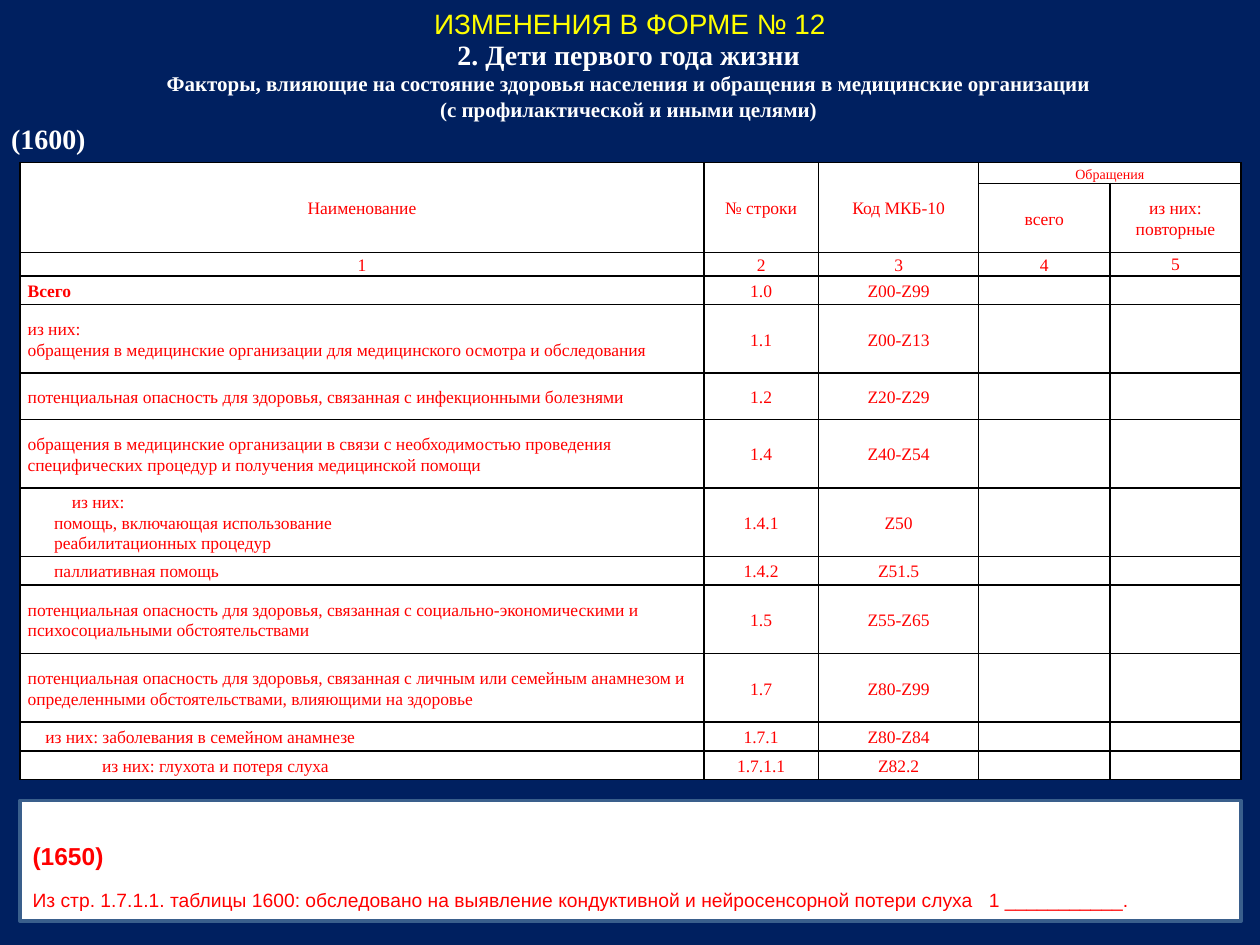
from lxml import etree
from pptx import Presentation, util as u
from pptx.dml.color import RGBColor
from pptx.enum import shapes, text
from pptx.oxml.ns import qn

WIDTH, HEIGHT = u.Inches(10), u.Inches(7.5)
COLORS = {"navy": "002060", "white": "FFFFFF", "red": "FF0000",
          "yellow": "FFFF00", "black": "000000", "steel": "3A5F8C"}
SERIF, SANS = "Times New Roman", "Arial"
CENTER, LEFT = text.PP_ALIGN.CENTER, text.PP_ALIGN.LEFT

COLUMNS = [5.42, 0.91, 1.27, 1.04, 1.04]
ROWS = [0.17, 0.55, 0.19, 0.23, 0.55, 0.37, 0.55,
        0.55, 0.23, 0.55, 0.55, 0.23, 0.23]
HEADER = [
    ["Наименование", "№ строки", "Код МКБ-10", "Обращения", ""],
    ["", "", "", "всего", "из них: повторные"],
    ["1", "2", "3", "4", "5"],
]
FACTORS = [
    ([("Всего", 0)], "1.0", "Z00-Z99"),
    ([("из них:", 0),
      ("обращения в медицинские организации для медицинского осмотра и обследования", 0)],
     "1.1", "Z00-Z13"),
    ([("потенциальная опасность для здоровья, связанная с инфекционными болезнями", 0)],
     "1.2", "Z20-Z29"),
    ([("обращения в медицинские организации в связи с необходимостью проведения "
       "специфических процедур и получения медицинской помощи", 0)], "1.4", "Z40-Z54"),
    ([("из них:", 0.35), ("помощь, включающая использование", 0.21),
      ("реабилитационных процедур", 0.21)], "1.4.1", "Z50"),
    ([("паллиативная помощь", 0.21)], "1.4.2", "Z51.5"),
    ([("потенциальная опасность для здоровья, связанная с социально-экономическими "
       "и психосоциальными обстоятельствами", 0)], "1.5", "Z55-Z65"),
    ([("потенциальная опасность для здоровья, связанная с личным или семейным анамнезом "
       "и определенными обстоятельствами, влияющими на здоровье", 0)], "1.7", "Z80-Z99"),
    ([("из них: заболевания в семейном анамнезе", 0.14)], "1.7.1", "Z80-Z84"),
    ([("из них: глухота и потеря слуха", 0.59)], "1.7.1.1", "Z82.2"),
]


def rgb(name):
    return RGBColor.from_string(COLORS[name])


def region(left, top, width, height):
    return (round(left * WIDTH), round(top * HEIGHT),
            round(width * WIDTH), round(height * HEIGHT))


def write(frame, lines, face, color, align=LEFT):
    for index, (words, size, bold) in enumerate(lines):
        line = frame.add_paragraph() if index else frame.paragraphs[0]
        line.text = words
        line.alignment = align
        line.font.size, line.font.bold = u.Pt(size), bold
        line.font.name, line.font.color.rgb = face, rgb(color)
        if not words:
            etree.SubElement(line._p, qn("a:endParaRPr"), sz=str(size * 100))


def add_heading(slide, box, lines, face, color):
    heading = slide.shapes.add_textbox(*box).text_frame
    heading.word_wrap = True
    write(heading, lines, face, color, CENTER)
    return heading


def style_cell(cell):
    cell.fill.solid()
    cell.fill.fore_color.rgb = rgb("white")
    cell.vertical_anchor = text.MSO_ANCHOR.MIDDLE
    cell.margin_left = cell.margin_right = u.Inches(0.06)
    cell.margin_top, cell.margin_bottom = u.Inches(0.01), 0
    properties = cell._tc.get_or_add_tcPr()
    for position, side in enumerate(("lnL", "lnR", "lnT", "lnB")):
        border = etree.Element(qn(f"a:{side}"), w=str(u.Pt(1)))
        solid = etree.SubElement(border, qn("a:solidFill"))
        etree.SubElement(solid, qn("a:srgbClr"), val=COLORS["black"])
        properties.insert(position, border)


def fill_cell(cell, entries, align, size=10, bold=False):
    style_cell(cell)
    write(cell.text_frame, [(words, size, bold) for words, _ in entries],
          SERIF, "red", align)
    for line, (_, indent) in zip(cell.text_frame.paragraphs, entries):
        line.line_spacing = 1.07
        if indent:
            line._p.get_or_add_pPr().set("marL", str(u.Inches(indent)))


def add_factor_table(slide, box):
    left, top, width, height = box
    table = slide.shapes.add_table(len(ROWS), len(COLUMNS), *box).table
    for column, share in zip(table.columns, COLUMNS):
        column.width = round(width * share / sum(COLUMNS))
    for row, share in zip(table.rows, ROWS):
        row.height = round(height * share / sum(ROWS))

    for r, labels in enumerate(HEADER):
        for c, label in enumerate(labels):
            fill_cell(table.cell(r, c), [(label, 0)], CENTER, 8 if r == 0 and c > 2 else 10)
    for r, (names, number, code) in enumerate(FACTORS, len(HEADER)):
        fill_cell(table.cell(r, 0), names, LEFT, bold=number == "1.0")
        for c, value in enumerate((number, code, "", ""), 1):
            fill_cell(table.cell(r, c), [(value, 0)], CENTER)

    for c in range(3):
        table.cell(0, c).merge(table.cell(1, c))
    table.cell(0, 3).merge(table.cell(0, 4))
    table.cell(2, 4).vertical_anchor = text.MSO_ANCHOR.TOP


def add_hearing_note(slide, box):
    panel = slide.shapes.add_shape(shapes.MSO_SHAPE.RECTANGLE, *box)
    panel.shadow.inherit = False
    panel.fill.solid()
    panel.fill.fore_color.rgb = rgb("white")
    panel.line.color.rgb = rgb("steel")
    panel.line.width = u.Pt(2)
    note = panel.text_frame
    note.word_wrap = True
    note.vertical_anchor = text.MSO_ANCHOR.BOTTOM
    note.margin_bottom = u.Inches(0.08)
    write(note, [
        ("(1650)", 14, True),
        ("Из стр. 1.7.1.1. таблицы 1600: обследовано на выявление кондуктивной "
         "и нейросенсорной потери слуха\t1 ___________.", 11, False),
    ], SANS, "red")
    survey = note.paragraphs[1]
    survey.space_before = u.Pt(10)
    stops = etree.SubElement(survey._p.get_or_add_pPr(), qn("a:tabLst"))
    etree.SubElement(stops, qn("a:tab"), pos=str(u.Inches(7.59)), algn="l")
    survey._p.pPr.find(qn("a:defRPr")).addprevious(stops)


def main():
    deck = Presentation()
    deck.slide_width, deck.slide_height = WIDTH, HEIGHT
    slide = deck.slides.add_slide(deck.slide_layouts[6])
    slide.background.fill.solid()
    slide.background.fill.fore_color.rgb = rgb("navy")

    add_factor_table(slide, region(0.016, 0.172, 0.969, 0.653))
    add_heading(slide, region(0, 0, 1, 0.05),
                [("ИЗМЕНЕНИЯ В ФОРМЕ № 12", 16, False)], SANS, "yellow")
    section = add_heading(slide, region(-0.001, 0.033, 1, 0.14), [
        ("2. Дети первого года жизни", 16, True),
        ("Факторы, влияющие на состояние здоровья населения "
         "и обращения в медицинские организации", 12, True),
        ("(с профилактической и иными целями)", 12, True),
        ("(1600)", 16, True),
    ], SERIF, "white")
    section.paragraphs[-1].alignment = LEFT
    add_hearing_note(slide, region(0.016, 0.847, 0.969, 0.128))
    deck.save("out.pptx")


if __name__ == "__main__":
    main()
